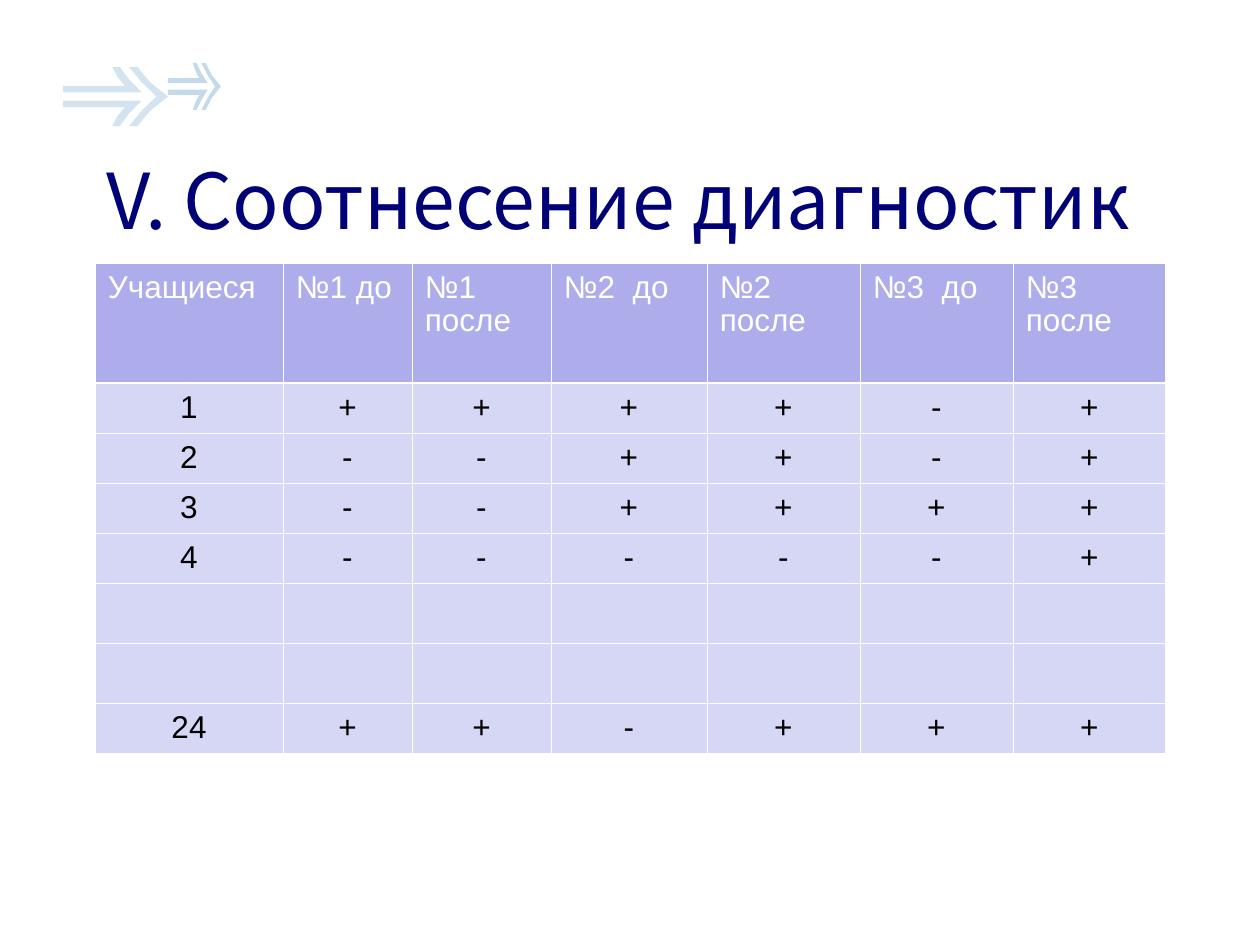
import pptx
import pptx.dml.color
import pptx.enum.text
import pptx.oxml.ns
import pptx.util
from lxml import etree

PX = 914400 / 126
NAVY = pptx.dml.color.RGBColor(0x01, 0x01, 0x77)
WHITE = pptx.dml.color.RGBColor(0xFF, 0xFF, 0xFF)
BLACK = pptx.dml.color.RGBColor(0x00, 0x00, 0x00)
HEADER_FILL = pptx.dml.color.RGBColor(0xAD, 0xAD, 0xEB)
BODY_FILL = pptx.dml.color.RGBColor(0xD6, 0xD6, 0xF5)
SMALL_ARROW = pptx.dml.color.RGBColor(0x8A, 0xB5, 0xD6)
LARGE_ARROW = pptx.dml.color.RGBColor(0xA9, 0xC9, 0xE1)
qn = pptx.oxml.ns.qn


def px(length):
    return pptx.util.Emu(round(length * PX))


def add_border(cell, side, points):
    """Append a white line to one side (L, R, T or B) of a cell."""
    line = etree.SubElement(cell._tc.get_or_add_tcPr(), qn(f"a:ln{side}"),
                            w=str(pptx.util.Pt(points)))
    fill = etree.SubElement(line, qn("a:solidFill"))
    etree.SubElement(fill, qn("a:srgbClr"), val=str(WHITE))


presentation = pptx.Presentation()
presentation.slide_width = px(1260)
presentation.slide_height = px(945)
slide = presentation.slides.add_slide(presentation.slide_layouts[6])

# Arrow outlines on a 100 by 100 grid; the lower shaft mirrors the upper one
upper_shaft = [(0, 43), (0, 32), (59, 32), (52, 17), (47, 0), (54, 0), (63, 21), (75, 43)]
lower_shaft = [(x, 100 - y) for x, y in upper_shaft]
head_upper = [(63, 0), (71, 0), (83, 26), (100, 50)]
head_lower = [(83, 74), (71, 100), (63, 100), (75, 74), (89, 50), (75, 26)]

for left, top, width, height, color in [(168, 63, 53, 47, SMALL_ARROW),
                                        (63, 67, 105, 59, LARGE_ARROW)]:
    outline = slide.shapes.build_freeform(*upper_shaft[0],
                                          scale=(width * PX / 100, height * PX / 100))
    outline.add_line_segments(upper_shaft[1:], close=True)
    for contour in (lower_shaft, head_upper + head_lower):
        outline.move_to(*contour[0])
        outline.add_line_segments(contour[1:], close=True)
    arrow = outline.convert_to_shape(px(left), px(top))
    arrow.shadow.inherit = False
    arrow.line.fill.background()
    arrow.fill.solid()
    arrow.fill.fore_color.rgb = color
    fill_color = arrow._element.spPr.find(qn("a:solidFill")).find(qn("a:srgbClr"))
    etree.SubElement(fill_color, qn("a:alpha"), val="50000")

title = slide.shapes.add_textbox(px(94), px(136), px(1071), px(126)).text_frame
title.word_wrap = True
title.vertical_anchor = pptx.enum.text.MSO_ANCHOR.MIDDLE
title_run = title.paragraphs[0].add_run()
title_run.text = "V. Соотнесение диагностик"
title_run.font.color.rgb = NAVY
for name, value in {"name": "Noto Sans CJK KR", "size": pptx.util.Pt(44)}.items():
    setattr(title_run.font, name, value)

results = [
    ["Учащиеся", "№1 до", "№1 после", "№2  до", "№2 после", "№3  до", "№3 после"],
    ["1", "+", "+", "+", "+", "-", "+"],
    ["2", "-", "-", "+", "+", "-", "+"],
    ["3", "-", "-", "+", "+", "+", "+"],
    ["4", "-", "-", "-", "-", "-", "+"],
    [""] * 7,
    [""] * 7,
    ["24", "+", "+", "-", "+", "+", "+"],
]
column_widths = [188, 129, 139, 156, 153, 153, 153]
row_heights = [120, 50, 50, 50, 50, 60, 60, 50]
cell_format = {"margin_left": px(13), "margin_top": px(9),
               "margin_right": px(13), "margin_bottom": px(6)}
cell_font = {"name": "Arial", "size": pptx.util.Pt(18)}

diagnostics = slide.shapes.add_table(len(row_heights), len(column_widths), px(95), px(263),
                                     px(sum(column_widths)), px(sum(row_heights))).table
diagnostics.horz_banding = False
for column, width in zip(diagnostics.columns, column_widths):
    column.width = px(width)
for row, height in zip(diagnostics.rows, row_heights):
    row.height = px(height)

for row_index, row_texts in enumerate(results):
    is_header = row_index == 0
    for column_index, text in enumerate(row_texts):
        cell = diagnostics.cell(row_index, column_index)
        for name, value in cell_format.items():
            setattr(cell, name, value)
        borders = {"L": 0.45, "R": 0.45,
                   "T": 1.47 if row_index == 1 else 0.45,
                   "B": 1.47 if is_header else 0.45}
        for side, points in borders.items():
            add_border(cell, side, points)
        cell.fill.solid()
        cell.fill.fore_color.rgb = HEADER_FILL if is_header else BODY_FILL
        if not text:
            continue
        paragraph = cell.text_frame.paragraphs[0]
        paragraph.line_spacing = 0.93
        if not is_header:
            paragraph.alignment = pptx.enum.text.PP_ALIGN.CENTER
        run = paragraph.add_run()
        run.text = text
        run.font.color.rgb = WHITE if is_header else BLACK
        for name, value in {**cell_font, "bold": False}.items():
            setattr(run.font, name, value)

presentation.save("out.pptx")
